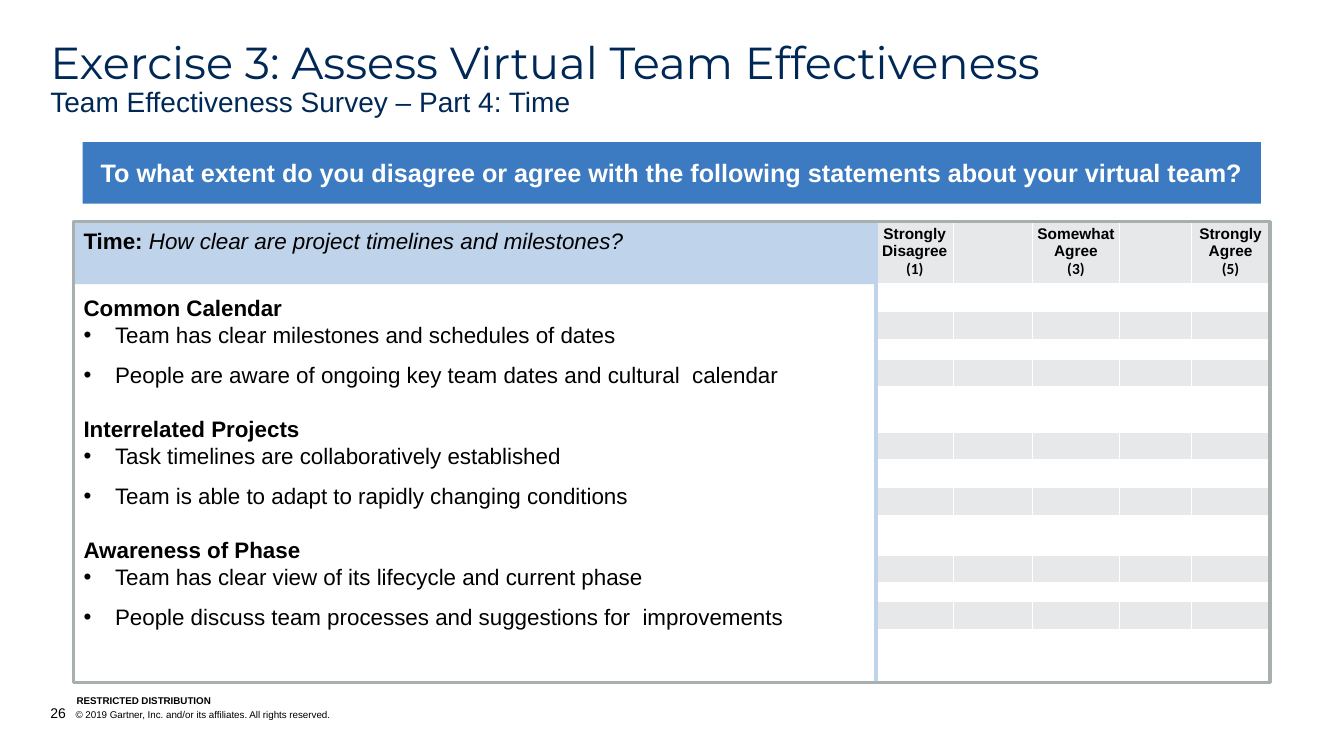
from dataclasses import dataclass
from typing import Any

from lxml import etree
from pptx import Presentation
from pptx.dml.color import RGBColor
from pptx.enum import shapes, text
from pptx.oxml import ns
from pptx.util import Pt


@dataclass(frozen=True)
class Theme:
    navy: str = "002856"
    blue: str = "3C7BC1"
    pale_blue: str = "BFD3EB"
    grey: str = "E7E8E9"
    frame: str = "A7AFAF"
    black: str = "000000"
    white: str = "FFFFFF"
    body_font: str = "Arial"
    title_font: str = "Montserrat"
    score_font: str = "Calibri"
    title: float = 32
    subtitle: float = 20
    banner: float = 18
    body: float = 16
    scale: float = 11
    page: float = 10
    footer: float = 7
    body_line: float = 19.3
    bullet_gap: float = 9.3
    topic_gap: float = 19.3
    heading_gap: float = 28.6


@dataclass(frozen=True)
class Box:
    left: float
    top: float
    width: float
    height: float

    def lengths(self) -> tuple[Pt, Pt, Pt, Pt]:
        return Pt(self.left), Pt(self.top), Pt(self.width), Pt(self.height)


@dataclass(frozen=True)
class Topic:
    heading: str
    statements: tuple[str, ...]


@dataclass(frozen=True)
class ScalePoint:
    width: float
    label: str = ""
    score: str = ""


THEME = Theme()
TOPICS = (
    Topic("Common Calendar", (
        "Team has clear milestones and schedules of dates",
        "People are aware of ongoing key team dates and cultural  calendar")),
    Topic("Interrelated Projects", (
        "Task timelines are collaboratively established",
        "Team is able to adapt to rapidly changing conditions")),
    Topic("Awareness of Phase", (
        "Team has clear view of its lifecycle and current phase",
        "People discuss team processes and suggestions for  improvements")),
)
SCALE = (
    ScalePoint(55.4, "Strongly Disagree", "(1)"),
    ScalePoint(56.2),
    ScalePoint(62.6, "Somewhat Agree", "(3)"),
    ScalePoint(51.1),
    ScalePoint(56.2, "Strongly Agree", "(5)"),
)
ROW_HEIGHTS = (44.6, 20.2, 20.2, 14.4, 19.4, 32.4, 19.4,
               20.2, 20.2, 28.1, 19.4, 13.7, 20.2, 28.1)


def add_text(paragraph: Any, content: str, *, size: float, color: str = THEME.black,
             font: str = THEME.body_font, bold: bool = False, italic: bool = False) -> None:
    run = paragraph.add_run()
    run.text = content
    run.font.size = Pt(size)
    run.font.name = font
    run.font.bold = bold
    run.font.italic = italic
    run.font.color.rgb = RGBColor.from_string(color)


def add_property(paragraph: Any, tag: str, **attributes: str) -> Any:
    return etree.SubElement(paragraph._p.get_or_add_pPr(), ns.qn(tag), **attributes)


def set_hanging_indent(paragraph: Any, indent: float) -> None:
    properties = paragraph._p.get_or_add_pPr()
    properties.set("marL", str(Pt(indent)))
    properties.set("indent", str(-Pt(indent)))


def set_margins(target: Any, horizontal: float, top: float, bottom: float) -> None:
    """Set the insets of a text frame or a table cell."""
    target.margin_left = target.margin_right = Pt(horizontal)
    target.margin_top, target.margin_bottom = Pt(top), Pt(bottom)


def add_rectangle(slide: Any, box: Box, fill: str = "", line: str = "") -> Any:
    shape = slide.shapes.add_shape(shapes.MSO_SHAPE.RECTANGLE, *box.lengths())
    shape.shadow.inherit = False
    if fill:
        shape.fill.solid()
        shape.fill.fore_color.rgb = RGBColor.from_string(fill)
    else:
        shape.fill.background()
    if line:
        shape.line.color.rgb = RGBColor.from_string(line)
        shape.line.width = Pt(2.5)
    else:
        shape.line.fill.background()
    shape.text_frame.word_wrap = True
    return shape


def add_title(slide: Any) -> None:
    title = slide.shapes.title
    title.left, title.top, title.width, title.height = Box(36, 28.8, 888, 34.6).lengths()
    frame = title.text_frame
    set_margins(frame, 0, 0, 0)
    frame.word_wrap = True
    frame.auto_size = text.MSO_AUTO_SIZE.NONE
    frame.vertical_anchor = text.MSO_ANCHOR.TOP
    paragraph = frame.paragraphs[0]
    paragraph.alignment = text.PP_ALIGN.LEFT
    paragraph.line_spacing = 0.9
    add_text(paragraph, "Exercise 3: Assess Virtual Team Effectiveness",
             size=THEME.title, font=THEME.title_font, color=THEME.navy)
    paragraph.add_line_break()
    add_text(paragraph, "Team Effectiveness Survey – Part 4: Time",
             size=THEME.subtitle, color=THEME.navy)


def format_cell(cell: Any, fill: str) -> None:
    properties = cell._tc.get_or_add_tcPr()
    for side in ("a:lnL", "a:lnR", "a:lnT", "a:lnB"):
        border = etree.SubElement(properties, ns.qn(side), w=str(Pt(1)))
        solid = etree.SubElement(border, ns.qn("a:solidFill"))
        etree.SubElement(solid, ns.qn("a:srgbClr"), val=THEME.white)
    cell.fill.solid()
    cell.fill.fore_color.rgb = RGBColor.from_string(fill)
    cell.vertical_anchor = text.MSO_ANCHOR.MIDDLE
    set_margins(cell, 0.7, 0.7, 0)


def add_scale_table(slide: Any) -> None:
    box = Box(625.7, 157.7, sum(point.width for point in SCALE), sum(ROW_HEIGHTS))
    table = slide.shapes.add_table(len(ROW_HEIGHTS), len(SCALE), *box.lengths()).table
    table.first_row = table.horz_banding = False
    for column, point in zip(table.columns, SCALE):
        column.width = Pt(point.width)
    for index, (row, height) in enumerate(zip(table.rows, ROW_HEIGHTS)):
        row.height = Pt(height)
        for cell, point in zip(row.cells, SCALE):
            format_cell(cell, THEME.white if index % 2 else THEME.grey)
            paragraph = cell.text_frame.paragraphs[0]
            if index or not point.label:
                paragraph._p.get_or_add_endParaRPr().set("sz", "800")
                continue
            score = cell.text_frame.add_paragraph()
            paragraph.alignment = score.alignment = text.PP_ALIGN.CENTER
            add_text(paragraph, point.label, size=THEME.scale, bold=True)
            add_text(score, point.score, size=THEME.scale, font=THEME.score_font, bold=True)


def add_survey(slide: Any) -> None:
    divider = slide.shapes.add_connector(
        shapes.MSO_CONNECTOR.STRAIGHT, Pt(625.7), Pt(158.4), Pt(625.7), Pt(487.4))
    divider.line.color.rgb = RGBColor.from_string(THEME.pale_blue)
    divider.line.width = Pt(2.5)
    etree.SubElement(divider._element.spPr, ns.qn("a:effectLst"))
    add_rectangle(slide, Box(53.3, 158.4, 572.4, 44.6), fill=THEME.pale_blue)

    frame = add_rectangle(slide, Box(52.6, 158.4, 854.6, 329), line=THEME.frame).text_frame
    frame.vertical_anchor = text.MSO_ANCHOR.TOP

    def style(paragraph: Any, gap: float) -> Any:
        paragraph.alignment = text.PP_ALIGN.LEFT
        paragraph.line_spacing = Pt(THEME.body_line)
        if gap:
            paragraph.space_before = Pt(gap)
        return paragraph

    question = style(frame.paragraphs[0], 0)
    add_text(question, "Time: ", size=THEME.body, bold=True)
    add_text(question, "How clear are project timelines and milestones?",
             size=THEME.body, italic=True)
    for number, topic in enumerate(TOPICS):
        heading = style(frame.add_paragraph(), THEME.topic_gap if number else THEME.heading_gap)
        add_text(heading, topic.heading, size=THEME.body, bold=True)
        for position, statement in enumerate(topic.statements):
            bullet = style(frame.add_paragraph(), THEME.bullet_gap if position else 0)
            set_hanging_indent(bullet, 22.5)
            add_property(bullet, "a:buFont", typeface=THEME.body_font)
            add_property(bullet, "a:buChar", char="•")
            add_text(bullet, statement, size=THEME.body)


def add_banner(slide: Any) -> None:
    frame = add_rectangle(slide, Box(59, 101.5, 841.7, 43.9), fill=THEME.blue).text_frame
    frame.vertical_anchor = text.MSO_ANCHOR.MIDDLE
    paragraph = frame.paragraphs[0]
    paragraph.alignment = text.PP_ALIGN.CENTER
    add_text(paragraph, "To what extent do you disagree or agree with the following "
             "statements about your virtual team?",
             size=THEME.banner, color=THEME.white, bold=True)


def add_footer_box(slide: Any, box: Box) -> Any:
    frame = slide.shapes.add_textbox(*box.lengths()).text_frame
    frame.word_wrap = True
    frame.vertical_anchor = text.MSO_ANCHOR.BOTTOM
    set_margins(frame, 0, 0, 0)
    paragraph = frame.paragraphs[0]
    set_hanging_indent(paragraph, 18)
    tabs = add_property(paragraph, "a:tabLst")
    etree.SubElement(tabs, ns.qn("a:tab"), pos=str(Pt(18)), algn="l")
    return paragraph


def add_footer(slide: Any) -> None:
    copyright_line = add_footer_box(slide, Box(36, 503.3, 575.3, 12.2))
    add_text(copyright_line, "26", size=THEME.page)
    add_text(copyright_line, "\t© 2019 Gartner, Inc. and/or its affiliates. All rights reserved.",
             size=THEME.footer)
    notice = add_footer_box(slide, Box(54.7, 496.1, 182.2, 8.6))
    add_text(notice, "RESTRICTED DISTRIBUTION", size=THEME.footer, bold=True)


def main() -> None:
    presentation = Presentation()
    presentation.slide_width, presentation.slide_height = Pt(960), Pt(540)
    slide = presentation.slides.add_slide(presentation.slide_layouts[5])
    for draw in (add_footer, add_scale_table, add_title, add_survey, add_banner):
        draw(slide)
    presentation.save("out.pptx")


if __name__ == "__main__":
    main()
